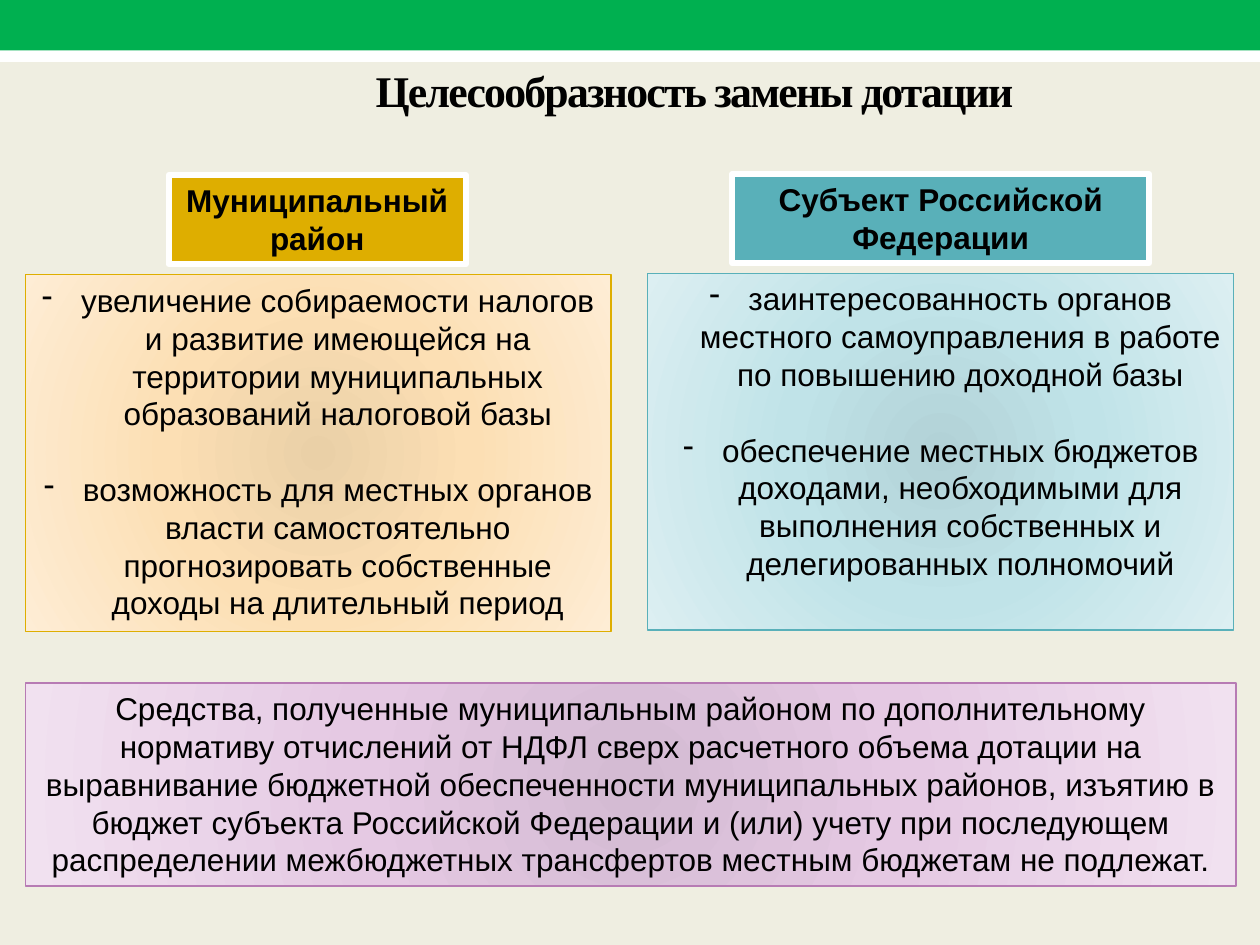
from pptx import Presentation
from pptx.dml.color import RGBColor as RGB
from pptx.enum.shapes import MSO_SHAPE as SHAPE
from pptx.enum.text import MSO_ANCHOR as ANCHOR, PP_ALIGN as ALIGN
from pptx.oxml import parse_xml
from pptx.oxml.ns import nsdecls
from pptx.util import Cm, Pt

COLORS = {
    "bg": "EFEEE1", "white": "FFFFFF", "green": "00B050", "black": "000000",
    "gold": "DEAE00", "teal": "59B0B9", "violet": "B77BB4",
}
GRADIENTS = {
    "gold": ["EAD0A7", "FCDFB4", "FEEDD5"],
    "teal": ["B2D2D7", "C0E3E8", "DCEFF2"],
    "violet": ["D4BBD3", "E5C9E3", "F1E1F0"],
}
BODY = {"name": "Arial", "size": Pt(18), "bold": False}
HEAD = {**BODY, "bold": True}
TITLE = {"name": "Times New Roman", "size": Pt(25), "bold": True}


def add_box(box, fill, line=None, width=0.75, radial=False):
    sp = s.shapes.add_shape(SHAPE.RECTANGLE, *[Cm(v) for v in box])
    sp.shadow.inherit = False
    if radial:
        stops = "".join(
            f'<a:gs pos="{pos}"><a:srgbClr val="{c}"/></a:gs>'
            for pos, c in zip((0, 45000, 100000), GRADIENTS[fill]))
        sp._element.spPr.find("{*}prstGeom").addnext(parse_xml(
            f'<a:gradFill {nsdecls("a")}><a:gsLst>{stops}</a:gsLst>'
            '<a:path path="circle"><a:fillToRect l="100000" t="100000" '
            'r="100000" b="100000"/></a:path></a:gradFill>'))
    else:
        sp.fill.solid()
        sp.fill.fore_color.rgb = RGB.from_string(COLORS[fill])
    if line:
        sp.line.color.rgb = RGB.from_string(COLORS[line])
        sp.line.width = Pt(width)
    else:
        sp.line.fill.background()
    return sp


def write(sp, texts, fmt, anchor=ANCHOR.TOP, dashes=False):
    tf = sp.text_frame
    tf.word_wrap = True
    tf.vertical_anchor = anchor
    for i, text in enumerate(texts):
        p = tf.paragraphs[0] if i == 0 else tf.add_paragraph()
        p.alignment = ALIGN.CENTER
        if i:
            p.space_before = Pt(21.6)
        if dashes:
            pPr = p._p.get_or_add_pPr()
            pPr.set("marL", str(Cm(0.79)))
            pPr.set("indent", str(-Cm(0.79)))
            pPr.append(parse_xml(f'<a:buChar {nsdecls("a")} char="-"/>'))
        r = p.add_run()
        r.text = text
        for key, value in fmt.items():
            setattr(r.font, key, value)
        r.font.color.rgb = RGB.from_string(COLORS["black"])


prs = Presentation()
prs.slide_width, prs.slide_height = Cm(25.4), Cm(19.05)
s = prs.slides.add_slide(prs.slide_layouts[5])
s.background.fill.solid()
s.background.fill.fore_color.rgb = RGB.from_string(COLORS["bg"])

# Top bands
add_box((0, 0.61, 25.4, 0.64), "white")
add_box((0, 0, 25.4, 1.02), "green")

# Title
title = s.shapes.title
title.left, title.top, title.width, title.height = [
    Cm(v) for v in (2.57, 1.04, 22.86, 1.55)]
write(title, ["Целесообразность замены дотации"], TITLE, ANCHOR.MIDDLE)
title.text_frame.paragraphs[0].runs[0]._r.get_or_add_rPr().set("spc", "-100")

# Conclusion
conclusion = add_box((0.51, 13.77, 24.41, 4.09), "violet", "violet", radial=True)
write(conclusion, [
    "Средства, полученные муниципальным районом по дополнительному нормативу "
    "отчислений от НДФЛ сверх расчетного объема дотации на выравнивание "
    "бюджетной обеспеченности муниципальных районов, изъятию в бюджет субъекта "
    "Российской Федерации и (или) учету при последующем распределении "
    "межбюджетных трансфертов местным бюджетам не подлежат."], BODY)

# Two columns: heading and reasons
columns = [
    ("gold", "Муниципальный район",
     (3.4, 3.53, 5.99, 1.8), (0.51, 5.54, 11.81, 7.19),
     ["увеличение собираемости налогов и развитие имеющейся на территории "
      "муниципальных образований налоговой базы",
      "возможность для местных органов власти самостоятельно прогнозировать "
      "собственные доходы на длительный период"]),
    ("teal", "Субъект Российской Федерации",
     (14.76, 3.51, 8.41, 1.8), (13.06, 5.51, 11.81, 7.19),
     ["заинтересованность органов местного самоуправления в работе по "
      "повышению доходной базы",
      "обеспечение местных бюджетов доходами, необходимыми для выполнения "
      "собственных и делегированных полномочий"]),
]
for color, heading, head_box, body_box, reasons in columns:
    write(add_box(head_box, color, "white", 3.5), [heading], HEAD)
    write(add_box(body_box, color, color, radial=True), reasons, BODY, dashes=True)

prs.save("out.pptx")
